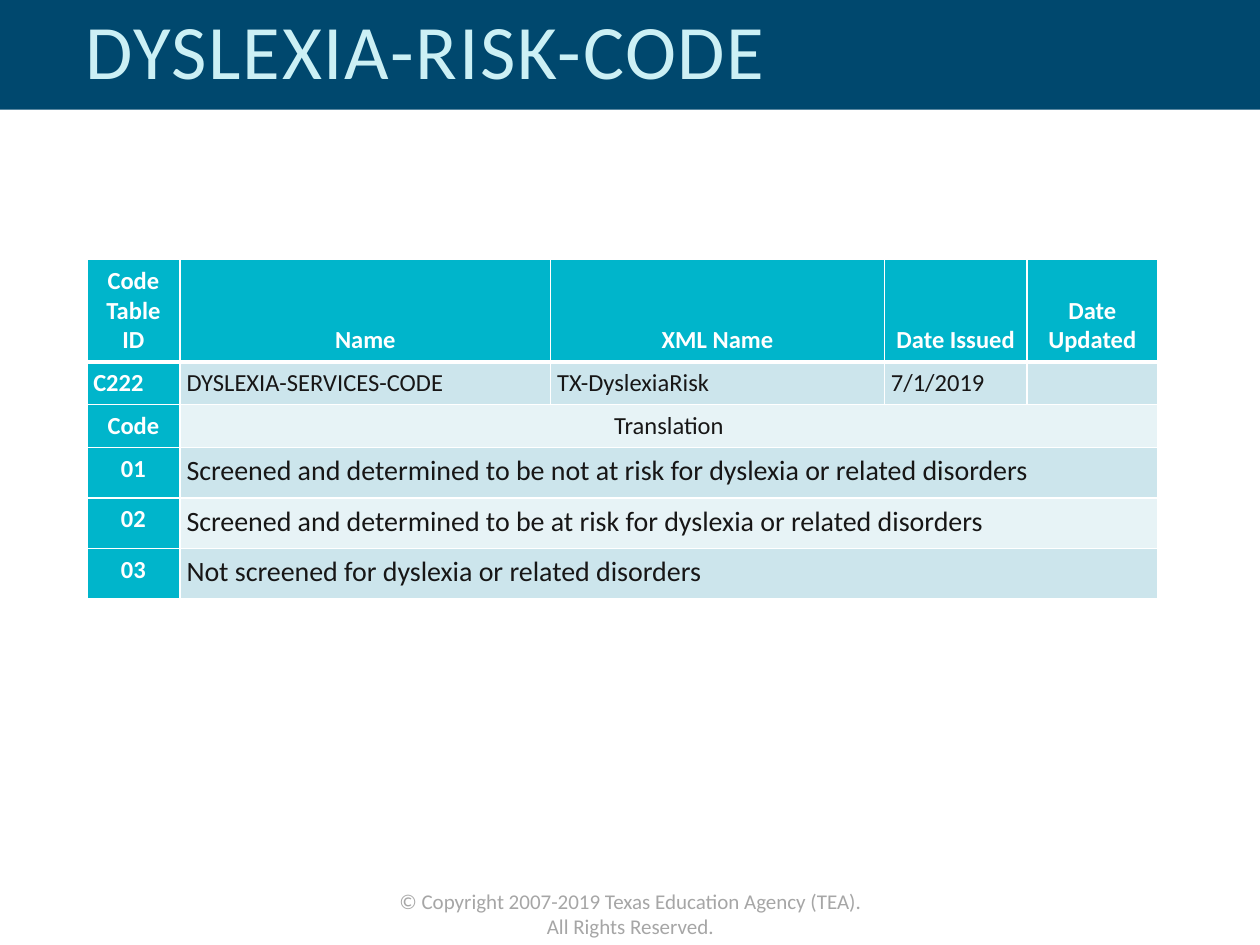
import pptx
import pptx.dml.color
import pptx.enum.shapes
import pptx.enum.text
import pptx.oxml.ns
import pptx.util
from lxml import etree
from pptx.util import Cm

COLORS = {
    "banner": "00486E",
    "title": "CCF0F5",
    "accent": "00B5CB",
    "band_dark": "CCE5EC",
    "band_light": "E7F3F6",
    "white": "FFFFFF",
    "ink": "171616",
    "footer": "A6A6A6",
}
ALIGN = pptx.enum.text.PP_ALIGN
ANCHOR = pptx.enum.text.MSO_ANCHOR
COLUMN_WIDTHS = [1.88, 7.47, 6.73, 2.87, 2.64]
ROW_HEIGHTS = [2.03, 0.86, 0.85, 1.02, 1.02, 1.02]
ROWS = [
    ["Code Table ID", "Name", "XML Name", "Date Issued", "Date Updated"],
    ["C222", "DYSLEXIA-SERVICES-CODE", "TX-DyslexiaRisk", "7/1/2019", ""],
    ["Code", "Translation"],
    ["01", "Screened and determined to be not at risk for dyslexia or related disorders"],
    ["02", "Screened and determined to be at risk for dyslexia or related disorders"],
    ["03", "Not screened for dyslexia or related disorders"],
]


def rgb(name):
    return pptx.dml.color.RGBColor.from_string(COLORS[name])


def add_xml(parent, tag, **attributes):
    return etree.SubElement(parent, pptx.oxml.ns.qn(tag), **attributes)


def write_text(text_frame, text, size, color, align=ALIGN.LEFT, bold=False):
    text_frame.text = text
    paragraph = text_frame.paragraphs[0]
    paragraph.alignment = align
    for run in paragraph.runs:
        run.font.name = "Calibri"
        run.font.size = pptx.util.Pt(size)
        run.font.bold = bold
        run.font.color.rgb = rgb(color)
    if not text:
        add_xml(paragraph._p, "a:endParaRPr", sz=str(size * 100))
    return paragraph


def add_banner(slide):
    banner = slide.shapes.add_shape(
        pptx.enum.shapes.MSO_SHAPE.RECTANGLE, 0, 0, Cm(25.4), Cm(2.21))
    banner.shadow.inherit = False
    banner.fill.solid()
    banner.fill.fore_color.rgb = rgb("banner")
    banner.line.fill.background()
    slide.shapes.title._element.addprevious(banner._element)


def format_title(slide, text):
    title = slide.shapes.title
    title.left, title.top, title.width, title.height = Cm(1.47), 0, Cm(20.32), Cm(2.21)
    frame = title.text_frame
    paragraph = write_text(frame, text, 44, "title")
    paragraph.line_spacing = 0.9
    paragraph.runs[0].font._element.set("spc", "100")
    frame.auto_size = pptx.enum.text.MSO_AUTO_SIZE.NONE
    frame.vertical_anchor = ANCHOR.MIDDLE


def set_borders(cell, top, bottom):
    properties = cell._tc.get_or_add_tcPr()
    for side, width in (("L", 1), ("R", 1), ("T", top), ("B", bottom)):
        line = add_xml(properties, f"a:ln{side}", w=str(pptx.util.Pt(width)))
        fill = add_xml(line, "a:solidFill")
        add_xml(fill, "a:srgbClr", val=COLORS["white"])


def format_cell(cell, row, column, text):
    accented = row == 0 or column == 0
    centred = row in (0, 2) or (column == 0 and row > 2)
    size = 16 if row > 2 and column else 14
    write_text(cell.text_frame, text, size, "white" if accented else "ink",
               ALIGN.CENTER if centred else ALIGN.LEFT, accented)
    cell.vertical_anchor = ANCHOR.BOTTOM if row in (0, 2) else ANCHOR.TOP
    cell.margin_left = cell.margin_right = Cm(0.13)
    cell.margin_top = cell.margin_bottom = Cm(0.13)
    set_borders(cell, 3 if row == 1 else 1, 3 if row == 0 else 1)
    band = "band_dark" if row % 2 else "band_light"
    cell.fill.solid()
    cell.fill.fore_color.rgb = rgb("accent" if accented else band)


def add_code_table(slide):
    table = slide.shapes.add_table(
        len(ROWS), len(COLUMN_WIDTHS), Cm(1.75), Cm(5.23),
        Cm(sum(COLUMN_WIDTHS)), Cm(sum(ROW_HEIGHTS))).table
    for column, width in zip(table.columns, COLUMN_WIDTHS):
        column.width = Cm(width)
    for row, height in zip(table.rows, ROW_HEIGHTS):
        row.height = Cm(height)
    for row, texts in enumerate(ROWS):
        if len(texts) == 2:
            table.cell(row, 1).merge(table.cell(row, len(COLUMN_WIDTHS) - 1))
        for column in range(len(COLUMN_WIDTHS)):
            text = texts[column] if column < len(texts) else ""
            format_cell(table.cell(row, column), row, column, text)


def add_footer(slide, text):
    footer = slide.shapes.add_textbox(Cm(7.72), Cm(17.78), Cm(9.98), Cm(0.76))
    footer.text_frame.word_wrap = True
    write_text(footer.text_frame, text, 12, "footer", ALIGN.CENTER)


def main():
    presentation = pptx.Presentation()
    presentation.slide_width, presentation.slide_height = Cm(25.4), Cm(19.05)
    slide = presentation.slides.add_slide(presentation.slide_layouts[5])
    add_banner(slide)
    format_title(slide, "DYSLEXIA-RISK-CODE")
    add_code_table(slide)
    add_footer(slide, "© Copyright 2007-2019 Texas Education Agency (TEA). All Rights Reserved.")
    presentation.save("out.pptx")


if __name__ == "__main__":
    main()
